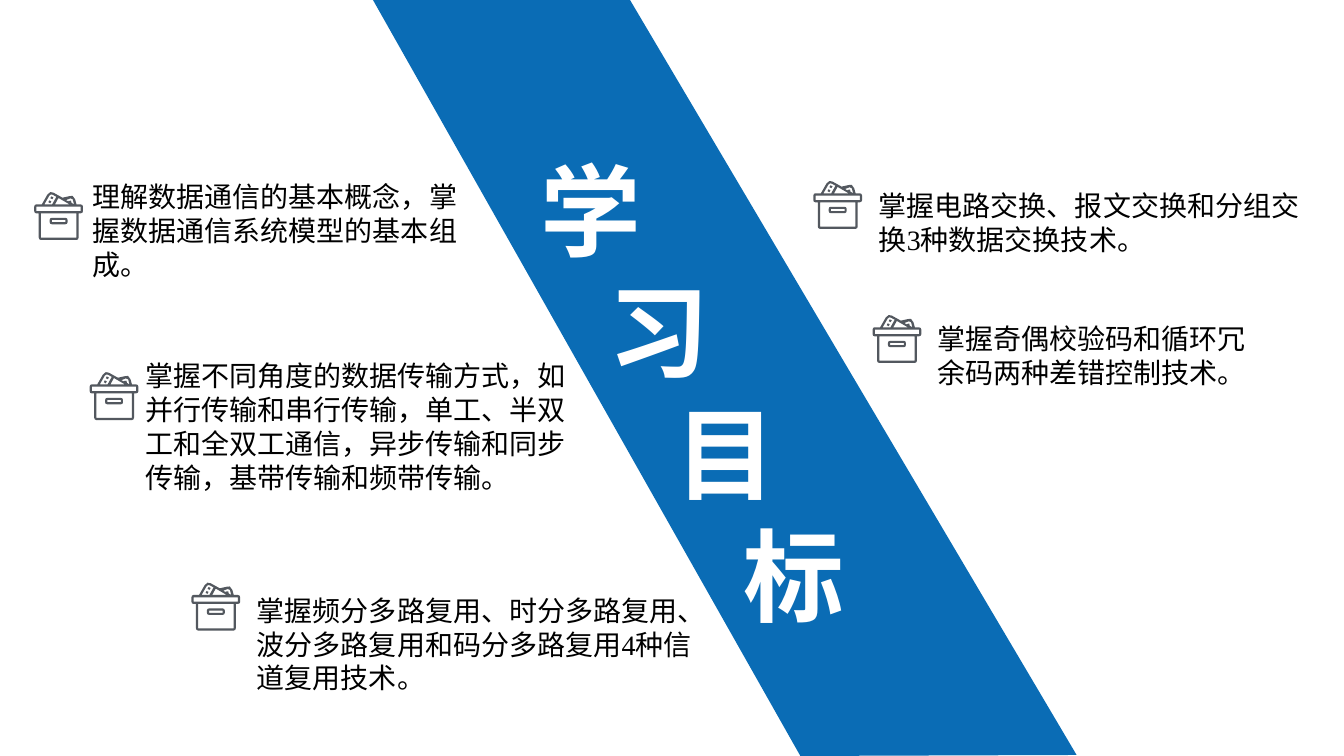
from dataclasses import dataclass

from lxml.etree import SubElement
from pptx import Presentation
from pptx.dml.color import RGBColor
from pptx.enum.text import MSO_ANCHOR, MSO_AUTO_SIZE, PP_ALIGN
from pptx.oxml.ns import qn
from pptx.shapes.autoshape import Shape
from pptx.slide import Slide
from pptx.text.text import TextFrame
from pptx.util import Pt

Point = tuple[float, float]
Outline = list[Point]


@dataclass(frozen=True)
class Theme:
    band: RGBColor = RGBColor(0x0A, 0x6C, 0xB5)
    icon: RGBColor = RGBColor(0x53, 0x58, 0x5F)
    body: RGBColor = RGBColor(0, 0, 0)
    heading: RGBColor = RGBColor(0xFF, 0xFF, 0xFF)
    heading_size: float = 72
    body_size: float = 20
    line_ratio: float = 1.21
    latin: str = "Times New Roman"
    chinese: str = "Noto Sans CJK SC"


@dataclass(frozen=True)
class Goal:
    text: str
    left: float
    top: float
    width: float
    height: float
    icon_left: float
    icon_top: float


THEME = Theme()

GOALS = [
    Goal("理解数据通信的基本概念，掌握数据通信系统模型的基本组成。",
         59, 123.1, 291.6, 80, 24.5, 137.2),
    Goal("掌握不同角度的数据传输方式，如并行传输和串行传输，单工、半双工和全双工通信，"
         "异步传输和同步传输，基带传输和频带传输。",
         96.5, 250.6, 323.3, 104.4, 64.1, 265.8),
    Goal("掌握电路交换、报文交换和分组交换3种数据交换技术。",
         620.6, 129.6, 326.2, 55.4, 581, 129.3),
    Goal("掌握奇偶校验码和循环冗余码两种差错控制技术。",
         662.4, 224.6, 250.6, 55.4, 623.3, 225),
    Goal("掌握频分多路复用、时分多路复用、波分多路复用和码分多路复用4种信道复用技术。",
         176.4, 418.3, 326.2, 80, 136.8, 416.2),
]

BAND = [(266.4, 0), (450, 0), (769, 539.3), (571.7, 540)]


def rectangle(left: float, top: float, right: float, bottom: float) -> Outline:
    return [(left, top), (right, top), (right, bottom), (left, bottom)]


BOX_EDGE = [
    (33.1, 8.8), (30.2, 8.8), (29.2, 5.2), (27.4, 2.7), (25.2, 2.9), (20.2, 4),
    (13.7, 0.4), (11.5, 0), (9.4, 1.8), (5.4, 8.8), (1.4, 8.8), (0.4, 9.2),
    (0, 10.4), (0, 13.7), (0.4, 14.8), (1.4, 15.2), (3.2, 15.2), (3.2, 32.4),
    (3.6, 33.7), (4.7, 34.2), (30.2, 34.2), (31.3, 33.7), (31.7, 32.4),
    (31.7, 15.2), (33.1, 15.2), (34.3, 14.8), (34.8, 13.7), (34.8, 10.4),
    (34.3, 9.2),
]
HANDLE_EDGE = [
    (12.6, 18.4), (22.3, 18.4), (23.4, 18.8), (23.8, 19.9), (23.8, 21.5),
    (23.4, 22.6), (22.3, 23), (12.6, 23), (11.4, 22.6), (11, 21.5),
    (11, 19.9), (11.4, 18.8),
]
LEFT_CARD = [(10.8, 2.5), (11.9, 1.7), (13.2, 1.9), (15.8, 3.4), (12.8, 8.8), (7.2, 8.8)]
MIDDLE_CARD = [(25.2, 8.8), (14.8, 8.8), (17.3, 4.2)]
RIGHT_CARD = [(25.9, 4.5), (27.5, 5.2), (28.4, 8.8), (26.6, 7.7),
              (26.2, 6.1), (24.4, 6.4), (24.4, 6.8), (22.7, 5.7)]
LOWER_DOT = [(12.2, 6.6), (10.8, 5.9), (10.1, 7.2), (11.5, 8)]
UPPER_DOT = [(13.7, 3.8), (12.2, 3.1), (11.5, 4.4), (13, 5.1)]

ARCHIVE_BOX = [
    BOX_EDGE,
    rectangle(1.6, 10.4, 33.2, 13.6),
    rectangle(4.8, 15.2, 30.1, 32.6),
    HANDLE_EDGE,
    rectangle(12.6, 19.9, 22.3, 21.5),
    LEFT_CARD, MIDDLE_CARD, RIGHT_CARD, LOWER_DOT, UPPER_DOT,
]


def draw_outlines(slide: Slide, outlines: list[Outline], color: RGBColor,
                  left: float = 0, top: float = 0) -> Shape:
    tenths = [[(round(x * 10), round(y * 10)) for x, y in outline] for outline in outlines]
    builder = slide.shapes.build_freeform(*tenths[0][0], scale=Pt(0.1))
    builder.add_line_segments(tenths[0][1:], close=True)
    for start, *rest in tenths[1:]:
        builder.move_to(*start)
        builder.add_line_segments(rest, close=True)
    drawn = builder.convert_to_shape(Pt(left), Pt(top))
    drawn.shadow.inherit = False
    drawn.fill.solid()
    drawn.fill.fore_color.rgb = color
    drawn.line.fill.background()
    return drawn


def write_text(frame: TextFrame, lines: list[str], *, size: float, color: RGBColor,
               latin: str, bold: bool = False, step: float = 0) -> None:
    frame.word_wrap = True
    frame.auto_size = MSO_AUTO_SIZE.NONE
    frame.vertical_anchor = MSO_ANCHOR.TOP
    frame.margin_left = frame.margin_right = Pt(7.2)
    frame.margin_top = Pt(3.6 + size * 0.08)
    frame.margin_bottom = 0
    for index, line in enumerate(lines):
        paragraph = frame.paragraphs[0] if index == 0 else frame.add_paragraph()
        paragraph.alignment = PP_ALIGN.LEFT
        paragraph.line_spacing = Pt(size * THEME.line_ratio)
        properties = paragraph._p.get_or_add_pPr()
        properties.set("marL", str(Pt(index * step)))
        properties.set("indent", "0")
        run = paragraph.add_run()
        run.text = line
        run.font.size = Pt(size)
        run.font.bold = bold
        run.font.color.rgb = color
        run.font.name = latin
        SubElement(run._r.get_or_add_rPr(), qn("a:ea"), typeface=THEME.chinese)


def draw_heading(slide: Slide) -> None:
    heading = slide.shapes.title
    heading.left, heading.top = Pt(378.7), Pt(95.8)
    heading.width, heading.height = Pt(439.2), Pt(356.4)
    write_text(heading.text_frame, list("学习目标"), size=THEME.heading_size,
               color=THEME.heading, latin=THEME.chinese, bold=True, step=48.4)


def draw_goal(slide: Slide, goal: Goal) -> None:
    statement = slide.shapes.add_textbox(
        Pt(goal.left), Pt(goal.top), Pt(goal.width), Pt(goal.height))
    write_text(statement.text_frame, [goal.text], size=THEME.body_size,
               color=THEME.body, latin=THEME.latin)
    draw_outlines(slide, ARCHIVE_BOX, THEME.icon, goal.icon_left, goal.icon_top)


def main() -> None:
    deck = Presentation()
    deck.slide_width, deck.slide_height = Pt(960), Pt(540)
    slide = deck.slides.add_slide(deck.slide_layouts[5])
    band = draw_outlines(slide, [BAND], THEME.band)
    slide.shapes.title._element.addprevious(band._element)
    draw_heading(slide)
    for goal in GOALS:
        draw_goal(slide, goal)
    deck.save("out.pptx")


if __name__ == "__main__":
    main()
